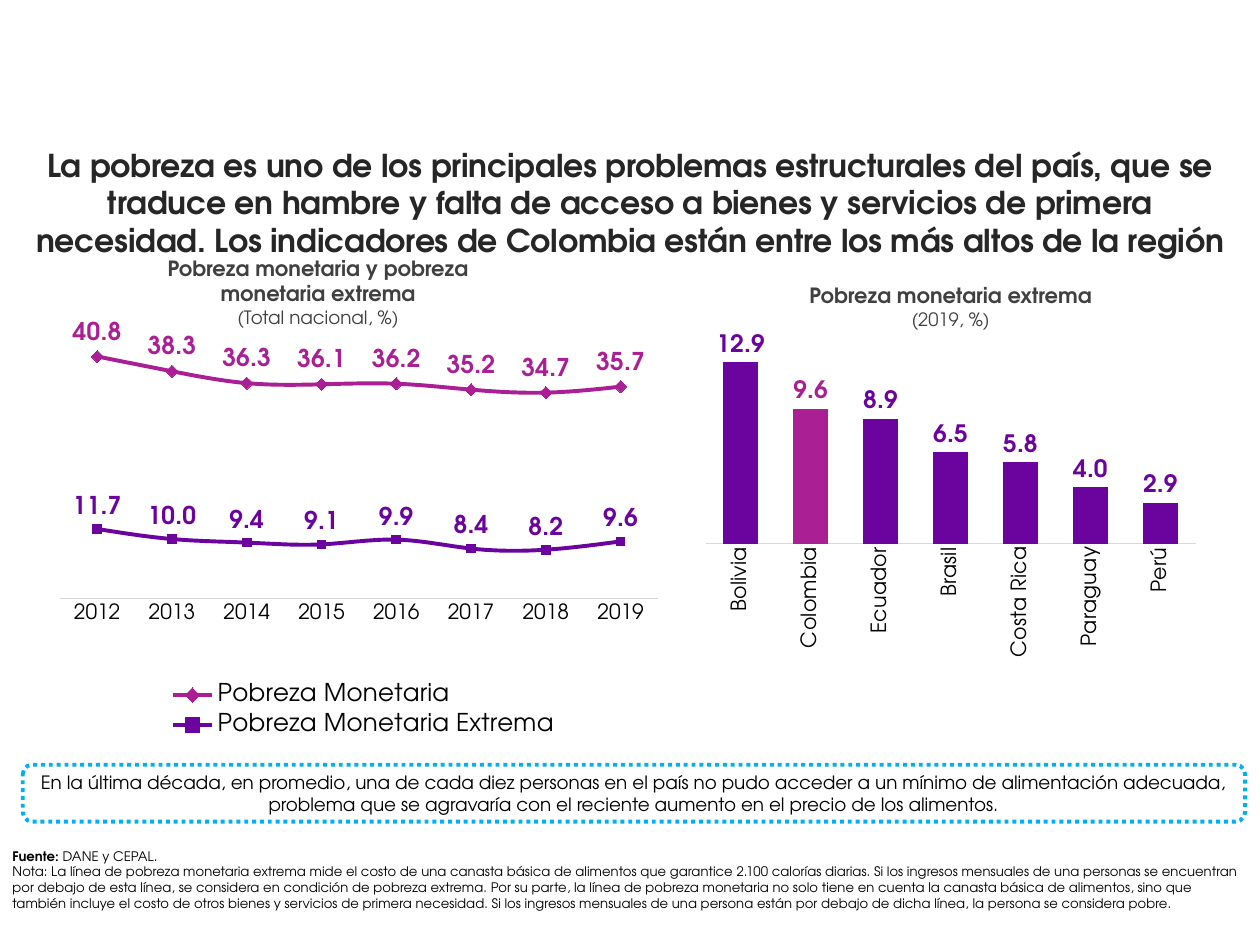
from pptx import Presentation
from pptx import util as u
from pptx.chart.data import CategoryChartData
from pptx.dml.color import RGBColor
from pptx.enum import chart as c
from pptx.enum import dml, shapes, text
from pptx.oxml import parse_xml
from pptx.oxml.ns import nsdecls, qn

Pt = u.Pt
FONT = "TeX Gyre Adventor"
BLACK = RGBColor(0, 0, 0)
TITLE_GREY = RGBColor(0x26, 0x26, 0x26)
HEADING_GREY = RGBColor(0x40, 0x40, 0x40)
AXIS_GREY = RGBColor(0xD9, 0xD9, 0xD9)
MAGENTA = RGBColor(0xAA, 0x1F, 0x93)
PURPLE = RGBColor(0x6B, 0x04, 0x9E)
BLUE = RGBColor(0x00, 0xB0, 0xF0)

TITLE = ("La pobreza es uno de los principales problemas estructurales del país, que se traduce en hambre "
         "y falta de acceso a bienes y servicios de primera necesidad. Los indicadores de Colombia están "
         "entre los más altos de la región")
HEADINGS = [
    ("Pobreza monetaria y pobreza monetaria extrema", "(Total nacional, %)", (88.5, 142.5, 186.5, 49)),
    ("Pobreza monetaria extrema", "(2019, %)", (419, 158, 248.5, 34.5)),
]
MESSAGE = ("En la última década, en promedio, una de cada diez personas en el país no pudo acceder a un mínimo "
           "de alimentación adecuada, problema que se agravaría con el reciente aumento en el precio de los "
           "alimentos.")
SOURCE = ("Fuente: ", "DANE y CEPAL.")
NOTE = ("Nota: La línea de pobreza monetaria extrema mide el costo de una canasta básica de alimentos que "
        "garantice 2.100 calorías diarias. Si los ingresos mensuales de una personas se encuentran por debajo "
        "de esta línea, se considera en condición de pobreza extrema. Por su parte, la línea de pobreza "
        "monetaria no solo tiene en cuenta la canasta básica de alimentos, sino que también incluye el costo "
        "de otros bienes y servicios de primera necesidad. Si los ingresos mensuales de una persona están por "
        "debajo de dicha línea, la persona se considera pobre.")
YEARS = [str(year) for year in range(2012, 2020)]
POVERTY = [
    ("Pobreza Monetaria", [40.8, 38.3, 36.3, 36.1, 36.2, 35.2, 34.7, 35.7],
     MAGENTA, c.XL_MARKER_STYLE.DIAMOND, 7),
    ("Pobreza Monetaria Extrema", [11.7, 10.0, 9.4, 9.1, 9.9, 8.4, 8.2, 9.6],
     PURPLE, c.XL_MARKER_STYLE.SQUARE, 5),
]
COUNTRIES = {"Bolivia": 12.9, "Colombia": 9.6, "Ecuador": 8.9, "Brasil": 6.5,
             "Costa Rica": 5.8, "Paraguay": 4.0, "Perú": 2.9}
HIGHLIGHT = "Colombia"


def style(font, size, color=BLACK, bold=False):
    font.name, font.size, font.bold = FONT, Pt(size), bold
    font.color.rgb = color


def add_run(paragraph, words, size, color=BLACK, bold=False):
    run = paragraph.add_run()
    run.text = words
    style(run.font, size, color, bold)
    return run


def place(shape, box):
    shape.left, shape.top, shape.width, shape.height = map(Pt, box)


def add_box(slide, box):
    frame = slide.shapes.add_textbox(*map(Pt, box)).text_frame
    frame.word_wrap = True
    frame.auto_size = text.MSO_AUTO_SIZE.SHAPE_TO_FIT_TEXT
    return frame


def set_layout(owner, x, y, width, height, inner=False):
    target = '<c:layoutTarget val="inner"/>' if inner else ""
    layout = parse_xml(
        f'<c:layout {nsdecls("c")}><c:manualLayout>{target}<c:xMode val="edge"/><c:yMode val="edge"/>'
        f'<c:x val="{x}"/><c:y val="{y}"/><c:w val="{width}"/><c:h val="{height}"/>'
        '</c:manualLayout></c:layout>')
    for old in owner.findall(qn("c:layout")):
        owner.remove(old)
    position = owner.find(qn("c:legendPos"))
    if position is None:
        owner.insert(0, layout)
    else:
        position.addnext(layout)


def add_chart(slide, kind, box, categories, series, maximum):
    data = CategoryChartData(number_format="0.0")
    data.categories = categories
    for name, values in series:
        data.add_series(name, values)
    chart = slide.shapes.add_chart(kind, *map(Pt, box), data).chart
    chart.has_title = chart.has_legend = False
    style(chart.font, 10)
    chart.value_axis.visible = False
    chart.value_axis.has_major_gridlines = False
    chart.value_axis.minimum_scale, chart.value_axis.maximum_scale = 0, maximum
    axis = chart.category_axis
    axis.major_tick_mark = c.XL_TICK_MARK.NONE
    axis.format.line.color.rgb = AXIS_GREY
    axis.format.line.width = Pt(0.75)
    style(axis.tick_labels.font, 12)
    chart.plots[0].vary_by_categories = False
    return chart


def label_values(series, color, position):
    labels = series.data_labels
    labels.show_value = True
    labels.number_format, labels.number_format_is_linked = "0.0", False
    labels.position = position
    style(labels.font, 14, color, True)


def add_poverty_chart(slide):
    chart = add_chart(slide, c.XL_CHART_TYPE.LINE_MARKERS, (27, 174.5, 358, 250), YEARS,
                      [row[:2] for row in POVERTY], 45)
    set_layout(chart.plots[0]._element.getparent(), 0.02, 0.06, 0.955, 0.61, inner=True)
    for series, (_, _, color, marker, size) in zip(chart.plots[0].series, POVERTY):
        series.smooth = True
        series.format.line.color.rgb = color
        series.format.line.width = Pt(2.25)
        series.marker.style, series.marker.size = marker, size
        series.marker.format.fill.solid()
        series.marker.format.fill.fore_color.rgb = color
        series.marker.format.line.color.rgb = color
        label_values(series, color, c.XL_LABEL_POSITION.ABOVE)
    chart.has_legend = True
    chart.legend.position = c.XL_LEGEND_POSITION.BOTTOM
    chart.legend.include_in_layout = False
    style(chart.legend.font, 14)
    set_layout(chart.legend._element, 0.19, 0.85, 0.63, 0.15)


def add_country_chart(slide):
    chart = add_chart(slide, c.XL_CHART_TYPE.COLUMN_CLUSTERED, (397.5, 191, 291.5, 188.5), list(COUNTRIES),
                      [("Pobreza monetaria extrema", list(COUNTRIES.values()))], 14)
    plot = chart.plots[0]
    plot.gap_width, plot.overlap = 100, -27
    series = plot.series[0]
    label_values(series, PURPLE, c.XL_LABEL_POSITION.OUTSIDE_END)
    point = series.points[list(COUNTRIES).index(HIGHLIGHT)]
    for part, color in ((series, PURPLE), (point, MAGENTA)):
        part.format.fill.solid()
        part.format.fill.fore_color.rgb = color
    style(point.data_label.font, 14, MAGENTA, True)
    point.data_label.position = c.XL_LABEL_POSITION.OUTSIDE_END
    body = chart.category_axis._element.find(qn("c:txPr")).find(qn("a:bodyPr"))
    body.set("rot", "-5400000")
    body.set("vert", "horz")


def main():
    presentation = Presentation()
    presentation.slide_width, presentation.slide_height = Pt(720), Pt(540)
    slide = presentation.slides.add_slide(presentation.slide_layouts[5])

    title = slide.shapes.title
    place(title, (8.5, 80.5, 703, 70.5))
    frame = title.text_frame
    frame.margin_left = frame.margin_right = Pt(5)
    frame.margin_top = frame.margin_bottom = Pt(2.75)
    frame.vertical_anchor = text.MSO_ANCHOR.TOP
    frame.auto_size = text.MSO_AUTO_SIZE.NONE
    run = add_run(frame.paragraphs[0], TITLE, 18, TITLE_GREY, True)
    run.font._element.set("spc", "-10")

    for heading, unit, box in HEADINGS:
        frame = add_box(slide, box)
        add_run(frame.paragraphs[0], heading, 12, HEADING_GREY, True)
        add_run(frame.add_paragraph(), unit, 10.5, HEADING_GREY)
        for paragraph in frame.paragraphs:
            paragraph.alignment = text.PP_ALIGN.CENTER

    frame = add_box(slide, (0, 481, 720, 44))
    add_run(frame.paragraphs[0], SOURCE[0], 7.5, bold=True)
    add_run(frame.paragraphs[0], SOURCE[1], 7.5)
    add_run(frame.add_paragraph(), NOTE, 7.5)

    message = slide.shapes.add_shape(shapes.MSO_SHAPE.ROUNDED_RECTANGLE, *map(Pt, (13, 437, 698.5, 32.5)))
    message.shadow.inherit = False
    message.fill.background()
    message.line.color.rgb = BLUE
    message.line.width = Pt(2.25)
    message.line.dash_style = dml.MSO_LINE.ROUND_DOT
    message.text_frame.word_wrap = True
    message.text_frame.vertical_anchor = text.MSO_ANCHOR.MIDDLE
    message.text_frame.paragraphs[0].alignment = text.PP_ALIGN.CENTER
    add_run(message.text_frame.paragraphs[0], MESSAGE, 10.5)

    add_poverty_chart(slide)
    add_country_chart(slide)
    presentation.save("out.pptx")


if __name__ == "__main__":
    main()
